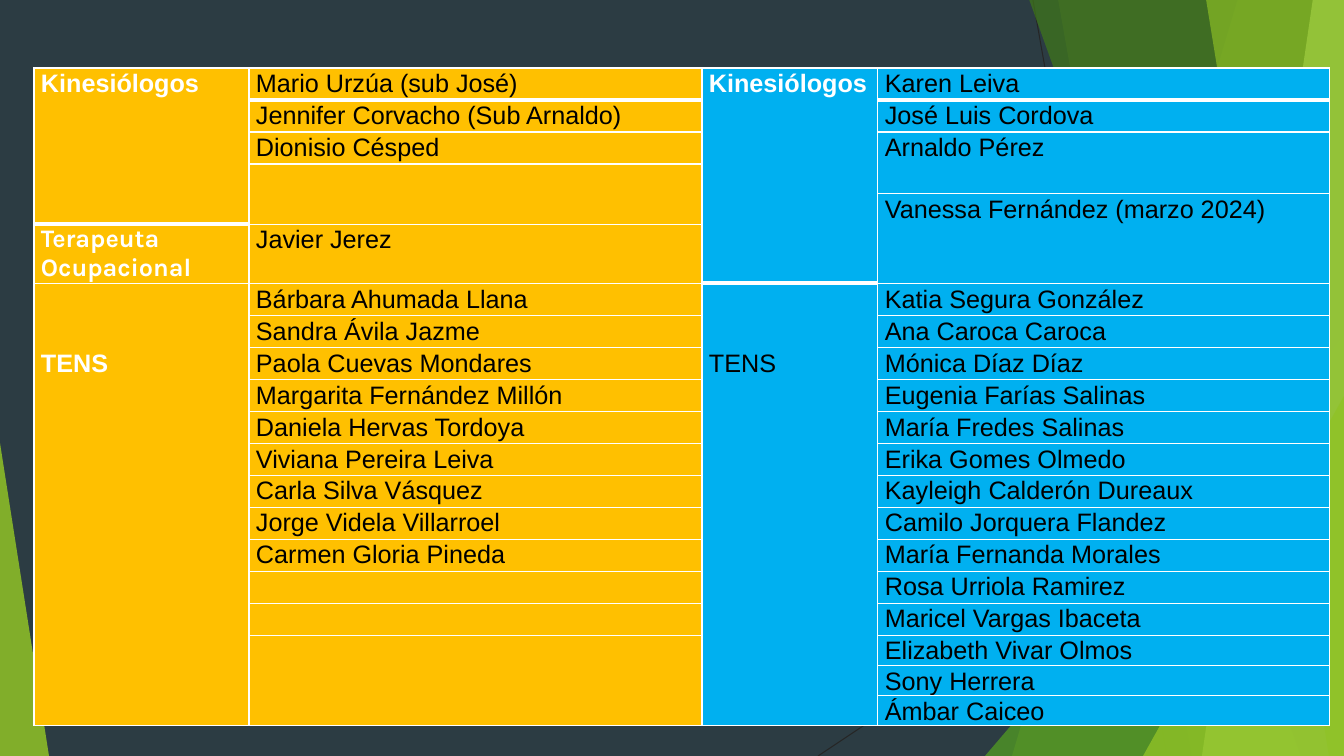
from lxml.etree import SubElement
from pptx import Presentation
from pptx.dml.color import RGBColor
from pptx.enum.shapes import MSO_CONNECTOR as Connector, MSO_SHAPE as Shape
from pptx.enum.text import PP_ALIGN as Align
from pptx.oxml.ns import qn
from pptx.util import Emu, Pt

WHITE, BLACK = "FFFFFF", "000000"
AMBER, BLUE = "FFC000", "00B0F0"
GREEN = "90C226"

COLUMN_WIDTHS = [215, 453, 176, 452]
ROW_HEIGHTS = [32, 32, 32, 30, 30, 59] + [32] * 11 + [30] * 3

AMBER_NAMES = [
    ("Mario Urzúa (sub José)", 1), ("Jennifer Corvacho (Sub Arnaldo)", 1),
    ("Dionisio Césped", 1), ("", 2), ("Javier Jerez", 1),
    ("Bárbara Ahumada Llana", 1), ("Sandra Ávila Jazme", 1),
    ("Paola Cuevas Mondares", 1), ("Margarita Fernández Millón", 1),
    ("Daniela Hervas Tordoya", 1), ("Viviana Pereira Leiva", 1),
    ("Carla Silva Vásquez", 1), ("Jorge Videla Villarroel", 1),
    ("Carmen Gloria Pineda", 1), ("", 1), ("", 1), ("", 3),
]
BLUE_NAMES = [
    ("Karen Leiva", 1), ("José Luis Cordova", 1), ("Arnaldo Pérez", 2),
    ("Vanessa Fernández (marzo 2024)", 2), ("Katia Segura González", 1),
    ("Ana Caroca Caroca", 1), ("Mónica Díaz Díaz", 1),
    ("Eugenia Farías Salinas", 1), ("María Fredes Salinas", 1),
    ("Erika Gomes Olmedo", 1), ("Kayleigh Calderón Dureaux", 1),
    ("Camilo Jorquera Flandez", 1), ("María Fernanda Morales", 1),
    ("Rosa Urriola Ramirez", 1), ("Maricel Vargas Ibaceta", 1),
    ("Elizabeth Vivar Olmos", 1), ("Sony Herrera", 1), ("Ámbar Caiceo", 1),
]
COLUMNS = [
    (AMBER, [("Kinesiólogos", 5), ("Terapeuta Ocupacional", 1), ("TENS", 14)]),
    (AMBER, AMBER_NAMES),
    (BLUE, [("Kinesiólogos", 6), ("TENS", 14)]),
    (BLUE, BLUE_NAMES),
]


def px(length):
    return Emu(round(length * 914400 / 100.8))


def color(code):
    return RGBColor.from_string(code)


def paint(shape, code, opacity):
    shape.shadow.inherit = False
    shape.line.fill.background()
    shape.fill.solid()
    shape.fill.fore_color.rgb = color(code)
    tint = shape.fill._xPr.find(qn("a:solidFill"))[0]
    SubElement(tint, qn("a:alpha"), val=str(opacity * 1000))


def add_line(page, start, end):
    line = page.shapes.add_connector(
        Connector.STRAIGHT, *[px(value) for value in start + end])
    line.line.color.rgb = color("262626")
    line.line.width = Pt(0.75)
    SubElement(line._element.spPr, qn("a:effectLst"))


def add_band(page, top_left, bottom_left, code, opacity):
    builder = page.shapes.build_freeform(px(top_left), px(-1))
    corners = [(1344, -1), (1344, 756), (bottom_left, 756)]
    builder.add_line_segments([(px(x), px(y)) for x, y in corners])
    paint(builder.convert_to_shape(), code, opacity)


def add_triangle(page, left, top, width, apex, code, opacity):
    triangle = page.shapes.add_shape(
        Shape.ISOSCELES_TRIANGLE, px(left), px(top), px(width), px(756 - top))
    triangle.adjustments[0] = apex
    paint(triangle, code, opacity)


def add_backdrop(page):
    page.background.fill.solid()
    page.background.fill.fore_color.rgb = color("2C3C43")
    add_line(page, (1033, 0), (1167, 756))
    add_line(page, (1344, 406), (818, 756))
    add_band(page, 1238, 1012, GREEN, 30)
    add_band(page, 1058, 1192, GREEN, 20)
    add_triangle(page, 985, 336, 359, 1, "54A021", 72)
    add_band(page, 1029, 1301, "3F7819", 70)
    add_band(page, 1313, 1202, "C0E474", 70)
    add_band(page, 1206, 1329, GREEN, 65)
    add_triangle(page, 1143, 396, 201, 1, GREEN, 80)
    add_triangle(page, 0, 443, 49, 0, GREEN, 85)


def set_borders(cell, bottom_width):
    properties = cell._tc.get_or_add_tcPr()
    for index, side in enumerate(["lnL", "lnR", "lnT", "lnB"]):
        width = Pt(bottom_width if side == "lnB" else 1)
        border = properties.makeelement(qn(f"a:{side}"), {"w": str(width)})
        fill = SubElement(border, qn("a:solidFill"))
        SubElement(fill, qn("a:srgbClr"), val=WHITE)
        properties.insert(index, border)


def write_cell(cell, text, code, bold):
    cell.margin_left = cell.margin_right = px(7)
    cell.margin_top = px(64 if text == "TENS" else 0)
    cell.margin_bottom = 0
    cell.text = text
    para = cell.text_frame.paragraphs[0]
    para.font.size = Pt(18)
    para.font.bold = bold
    para.font.color.rgb = color(code)
    if text == "Terapeuta Ocupacional":
        para.font.name = "Karla"
    else:
        para.font.name = "Arial"
        para.alignment = Align.JUSTIFY
        para.line_spacing = 1.07


def fill_column(table, column, fill, entries):
    row = 0
    for text, span in entries:
        last = row + span - 1
        for index in range(row, last + 1):
            cell = table.cell(index, column)
            cell.fill.solid()
            cell.fill.fore_color.rgb = color(fill)
            set_borders(cell, 3 if row == 0 else 1)
        cell = table.cell(row, column)
        if span > 1:
            cell.merge(table.cell(last, column))
        heading = column == 0 or (column == 2 and row == 0)
        write_cell(cell, text, WHITE if heading else BLACK, heading)
        row += span


def add_roster(page):
    frame = page.shapes.add_table(
        len(ROW_HEIGHTS), len(COLUMN_WIDTHS), px(34), px(68),
        px(sum(COLUMN_WIDTHS)), px(sum(ROW_HEIGHTS)))
    table = frame.table
    table.first_row = table.horz_banding = False
    for column, width in zip(table.columns, COLUMN_WIDTHS):
        column.width = px(width)
    for row, height in zip(table.rows, ROW_HEIGHTS):
        row.height = px(height)
    for index, (fill, entries) in enumerate(COLUMNS):
        fill_column(table, index, fill, entries)


def main():
    deck = Presentation()
    deck.slide_width, deck.slide_height = px(1344), px(756)
    page = deck.slides.add_slide(deck.slide_layouts[6])
    add_backdrop(page)
    add_roster(page)
    deck.save("out.pptx")


if __name__ == "__main__":
    main()
